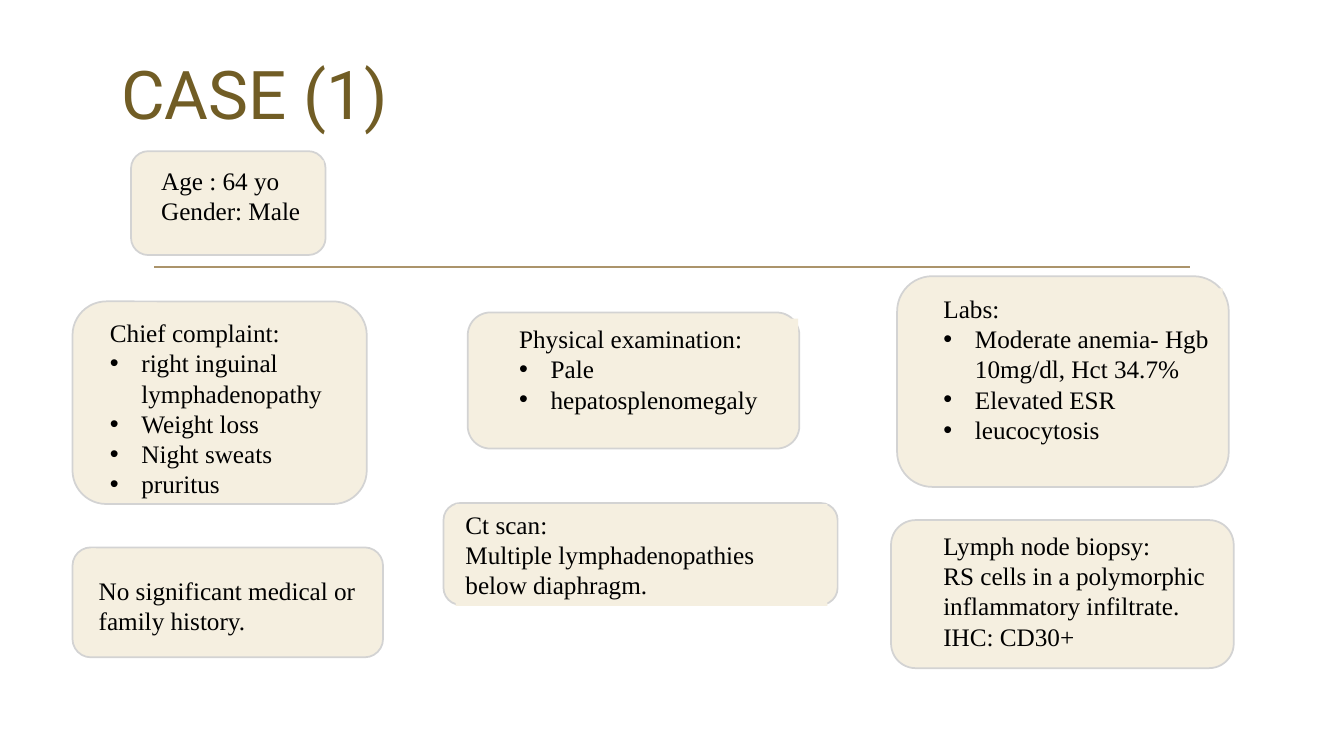
"""Build the CASE (1) slide: patient summary cards around a divider line."""
from dataclasses import dataclass
from typing import Optional

from lxml import etree
from pptx import Presentation
from pptx.dml.color import RGBColor
from pptx.enum.shapes import MSO_CONNECTOR, MSO_SHAPE
from pptx.enum.text import MSO_ANCHOR, MSO_AUTO_SIZE, PP_ALIGN
from pptx.oxml.ns import qn
from pptx.util import Pt

ROUNDED = MSO_SHAPE.ROUNDED_RECTANGLE
STRAIGHT = MSO_CONNECTOR.STRAIGHT
TOP, MIDDLE = MSO_ANCHOR.TOP, MSO_ANCHOR.MIDDLE
GROW = MSO_AUTO_SIZE.SHAPE_TO_FIT_TEXT
LEFT, CENTER = PP_ALIGN.LEFT, PP_ALIGN.CENTER
COMPARISON_LAYOUT = 4


@dataclass(frozen=True)
class Theme:
    card: RGBColor = RGBColor(0xF5, 0xEF, 0xE0)
    border: RGBColor = RGBColor(0xD3, 0xD3, 0xD3)
    divider: RGBColor = RGBColor(0xAB, 0x94, 0x6B)
    title: RGBColor = RGBColor(0x71, 0x5D, 0x25)
    text: RGBColor = RGBColor(0, 0, 0)
    title_font: str = "Roboto"
    text_font: str = "Times New Roman"
    title_size: float = 48
    text_size: float = 18
    line_width: float = 1.25
    bullet_indent: float = 22.5


@dataclass(frozen=True)
class Box:
    left: float
    top: float
    width: float
    height: float


@dataclass(frozen=True)
class Card:
    frame: Box
    note: Box
    lines: tuple[str, ...]
    bullets: tuple[str, ...] = ()
    placeholder: Optional[int] = None


THEME = Theme()
CARDS = (
    Card(Box(93.6, 108, 139, 74.2), Box(108, 114.5, 123.1, 51.1),
         ("Age : 64 yo", "Gender: Male")),
    Card(Box(51.8, 215.3, 210.2, 144.7), Box(71.3, 223.2, 171.4, 138.2),
         ("Chief complaint:",),
         ("right inguinal lymphadenopathy", "Weight loss", "Night sweats", "pruritus"), 1),
    Card(Box(51.8, 391, 221.8, 78.5), Box(63.4, 407.5, 198.7, 51.1),
         ("No significant medical or family history.",)),
    Card(Box(334.1, 223.2, 236.9, 97.2), Box(363.6, 227.5, 206.6, 72.7),
         ("Physical examination:",), ("Pale", "hepatosplenomegaly"), 2),
    Card(Box(640.8, 197.3, 236.9, 150.5), Box(666.7, 205.9, 206.6, 116.6),
         ("Labs:",),
         ("Moderate anemia- Hgb 10mg/dl, Hct 34.7%", "Elevated ESR", "leucocytosis"), 3),
    Card(Box(316.8, 359.3, 281.5, 72.7), Box(325.4, 360, 265.7, 72.7),
         ("Ct scan:", "Multiple lymphadenopathies below diaphragm.")),
    Card(Box(636.5, 371.5, 244.8, 105.8), Box(666.7, 375.1, 206.6, 94.3),
         ("Lymph node biopsy:", "RS cells in a polymorphic inflammatory infiltrate.",
          "IHC: CD30+")),
)


def points(box: Box) -> tuple[Pt, Pt, Pt, Pt]:
    return Pt(box.left), Pt(box.top), Pt(box.width), Pt(box.height)


def place(sp, box: Box) -> None:
    sp.left, sp.top, sp.width, sp.height = points(box)


def set_frame(tf, anchor: MSO_ANCHOR, wrap: bool) -> None:
    tf.word_wrap = wrap
    tf.auto_size = GROW
    tf.vertical_anchor = anchor
    tf.margin_left = tf.margin_right = Pt(7.2)
    tf.margin_top = tf.margin_bottom = Pt(3.6)


def set_bullet(p, bulleted: bool) -> None:
    indent = Pt(THEME.bullet_indent) if bulleted else 0
    pPr = p._p.get_or_add_pPr()
    pPr.set("marL", str(indent))
    pPr.set("indent", str(-indent))
    if bulleted:
        etree.SubElement(pPr, qn("a:buFont"), typeface="Arial")
        etree.SubElement(pPr, qn("a:buChar"), char="•")
    else:
        etree.SubElement(pPr, qn("a:buNone"))


def add_run(p, text: str, font: str, size: float, color: RGBColor) -> None:
    r = p.add_run()
    r.text = text
    r.font.name = font
    r.font.size = Pt(size)
    r.font.bold = False
    r.font.color.rgb = color


def write_note(tf, card: Card) -> None:
    entries = [(t, False) for t in card.lines] + [(t, True) for t in card.bullets]
    for i, (text, bulleted) in enumerate(entries):
        p = tf.add_paragraph() if i else tf.paragraphs[0]
        set_bullet(p, bulleted)
        p.alignment = LEFT
        p.space_before = Pt(0)
        add_run(p, text, THEME.text_font, THEME.text_size, THEME.text)


def add_card(s, card: Card) -> None:
    frame = s.shapes.add_shape(ROUNDED, *points(card.frame))
    frame.shadow.inherit = False
    frame.fill.solid()
    frame.fill.fore_color.rgb = THEME.card
    frame.line.color.rgb = THEME.border
    frame.line.width = Pt(THEME.line_width)

    if card.placeholder is None:
        sp = s.shapes.add_textbox(*points(card.note))
    else:
        sp = next(ph for ph in s.placeholders
                  if ph.placeholder_format.idx == card.placeholder)
        place(sp, card.note)
        frame._element.addnext(sp._element)
    sp.fill.solid()
    sp.fill.fore_color.rgb = THEME.card
    set_frame(sp.text_frame, TOP, True)
    write_note(sp.text_frame, card)


def add_title(s, text: str) -> None:
    sp = s.shapes.title
    place(sp, Box(71.3, 33.1, 221, 65.5))
    set_frame(sp.text_frame, MIDDLE, False)
    p = sp.text_frame.paragraphs[0]
    p.alignment = CENTER
    add_run(p, text, THEME.title_font, THEME.title_size, THEME.title)


def add_divider(s) -> None:
    line = s.shapes.add_connector(STRAIGHT, Pt(110.2), Pt(190.8), Pt(850.3), Pt(190.8))
    line.line.color.rgb = THEME.divider
    line.line.width = Pt(THEME.line_width)
    etree.SubElement(line._element.spPr, qn("a:effectLst"))


def main() -> None:
    prs = Presentation()
    prs.slide_width, prs.slide_height = Pt(960), Pt(540)
    s = prs.slides.add_slide(prs.slide_layouts[COMPARISON_LAYOUT])
    add_title(s, "CASE (1)")
    add_divider(s)
    for card in CARDS:
        add_card(s, card)
    for ph in list(s.placeholders):
        if not ph.text_frame.text:
            ph._element.getparent().remove(ph._element)
    prs.save("out.pptx")


if __name__ == "__main__":
    main()
